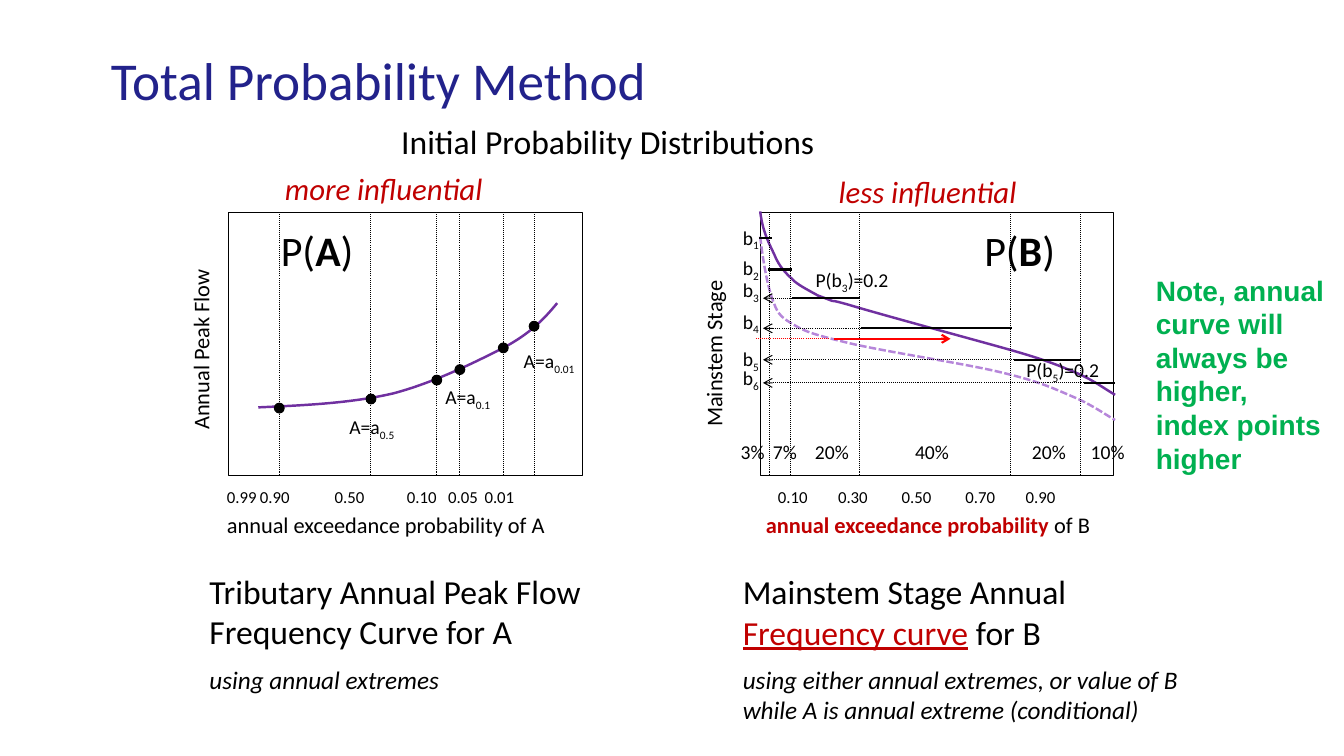
from lxml.etree import SubElement
from pptx import Presentation
from pptx.dml.color import RGBColor
from pptx.enum.dml import MSO_LINE
from pptx.enum.shapes import MSO_CONNECTOR, MSO_SHAPE
from pptx.enum.text import MSO_ANCHOR, MSO_AUTO_SIZE, PP_ALIGN
from pptx.oxml.ns import qn
from pptx.util import Pt

BLACK, RED, CRIMSON = "000000", "FF0000", "C00000"
PURPLE, LILAC, NAVY, GREEN = "7030A0", "B686DA", "22228B", "00B050"
SUBSCRIPT = {"baseline": -25000}


def color(hex_string):
    return RGBColor.from_string(hex_string)


class SlideBuilder:
    """Holds the text style and the slide being filled."""

    font_name = "Calibri"

    def __init__(self, slide):
        self.slide = slide

    def add_run(self, paragraph, text, size, hex_color=BLACK, bold=False, italic=False,
                underline=False, baseline=0, font_name=None):
        run = paragraph.add_run()
        run.text = text
        font = run.font
        font.name, font.size = font_name or self.font_name, Pt(size)
        font.bold, font.italic, font.underline = bold, italic, underline
        font.color.rgb = color(hex_color)
        if baseline:
            run._r.get_or_add_rPr().set("baseline", str(baseline))

    def title(self, text, left, top, width, height, size, hex_color):
        shape = self.slide.shapes.title
        shape.left, shape.top, shape.width, shape.height = map(Pt, (left, top, width, height))
        frame = shape.text_frame
        frame.vertical_anchor = MSO_ANCHOR.MIDDLE
        frame.paragraphs[0].alignment = PP_ALIGN.LEFT
        self.add_run(frame.paragraphs[0], text, size, hex_color)

    def text(self, left, top, width, height, *paragraphs, rotation=0, tabs=(), **style):
        """Each paragraph is a list of (text, style changes) runs."""
        shape = self.slide.shapes.add_textbox(*map(Pt, (left, top, width, height)))
        shape.rotation = rotation
        frame = shape.text_frame
        frame.word_wrap = True
        frame.auto_size = MSO_AUTO_SIZE.SHAPE_TO_FIT_TEXT
        for index, runs in enumerate(paragraphs):
            paragraph = frame.add_paragraph() if index else frame.paragraphs[0]
            if index:
                paragraph.space_before = Pt(9)
            for text, changes in runs:
                self.add_run(paragraph, text, **{**style, **changes})
        if tabs:
            tab_list = SubElement(frame.paragraphs[0]._p.get_or_add_pPr(), qn("a:tabLst"))
            for position in tabs:
                SubElement(tab_list, qn("a:tab"), pos=str(Pt(position)), algn="l")

    def label(self, left, top, width, height, text, size, **style):
        self.text(left, top, width, height, [(text, {})], size=size, **style)

    def set_line(self, shape, hex_color, width, dash=None):
        shape.line.color.rgb = color(hex_color)
        shape.line.width = Pt(width)
        if dash is not None:
            shape.line.dash_style = dash

    def shape(self, kind, left, top, width, height, fill=None):
        shape = self.slide.shapes.add_shape(kind, *map(Pt, (left, top, width, height)))
        shape.shadow.inherit = False
        if fill:
            shape.fill.solid()
            shape.fill.fore_color.rgb = color(fill)
        else:
            shape.fill.background()
        self.set_line(shape, BLACK, 0.75)

    def line(self, x1, y1, x2, y2, hex_color=BLACK, width=1.5, dash=None, arrow=False):
        connector = self.slide.shapes.add_connector(
            MSO_CONNECTOR.STRAIGHT, *map(Pt, (x1, y1, x2, y2)))
        self.set_line(connector, hex_color, width, dash)
        if arrow:
            SubElement(connector.line._get_or_add_ln(), qn("a:tailEnd"), type="arrow")
        SubElement(connector._element.spPr, qn("a:effectLst"))

    def dotted(self, x1, y1, x2, y2, **style):
        self.line(x1, y1, x2, y2, width=0.75, dash=MSO_LINE.ROUND_DOT, **style)

    def curve(self, points, hex_color, dash=None):
        """The first point starts the curve; each further three make a Bezier piece."""
        start, *others = [(Pt(x), Pt(y)) for x, y in points]
        builder = self.slide.shapes.build_freeform(*start)
        builder.add_line_segments(others, close=False)
        shape = builder.convert_to_shape()
        outline = next(shape._element.iter(qn("a:path")))
        segments = outline.findall(qn("a:lnTo"))
        for first in range(0, len(segments), 3):
            bezier = SubElement(outline, qn("a:cubicBezTo"))
            for segment in segments[first:first + 3]:
                bezier.append(segment[0])
                outline.remove(segment)
        shape.shadow.inherit = False
        shape.fill.background()
        self.set_line(shape, hex_color, 1.75, dash)


def build_chart_a(builder):
    # Frame, curve and quantile points
    builder.shape(MSO_SHAPE.RECTANGLE, 163.5, 152, 252.5, 188)
    builder.curve([(184.5, 291), (218, 289.5), (251, 288), (281, 281), (309.5, 273.5),
                   (339, 259), (359.5, 248.5), (378.5, 238.5), (389, 227.5), (398, 216.5)],
                  PURPLE)
    quantiles = [(199.5, 291.5), (265, 285), (312, 271.5), (328.5, 264), (359.5, 248.5),
                 (381.5, 233)]
    for x, y in quantiles:
        builder.dotted(x, 339, x, 151.5)
        builder.shape(MSO_SHAPE.OVAL, x - 3.5, y - 3.5, 7, 7, fill=BLACK)
    for probability, left, top in [("0.01", 367, 245.5), ("0.5", 242.5, 293),
                                   ("0.1", 311, 271.5)]:
        builder.text(left, top, 80, 24, [("A=a", {}), (probability, SUBSCRIPT)], size=14)

    # Axes and captions
    builder.label(155, 344, 279, 22, "0.99\t0.90\t0.50\t0.10\t0.05\t0.01", 12,
                  tabs=(23.5, 77, 128.5, 158, 184))
    builder.label(155, 361.5, 256, 27, "annual exceedance probability of A", 16)
    builder.label(59, 216, 169, 27, "Annual Peak Flow", 16, rotation=270)
    builder.label(196.5, 118, 194, 34, "more influential", 22, hex_color=CRIMSON, italic=True)
    builder.text(142.5, 404, 313, 98,
                 [("Tributary Annual Peak Flow Frequency Curve for A", {})],
                 [("using annual extremes", {"size": 18, "italic": True})], size=24)


def build_chart_b(builder):
    # Frame and the two curves
    builder.shape(MSO_SHAPE.RECTANGLE, 543, 152, 252.5, 188)
    builder.curve([(543, 151), (545, 168), (551, 176.5), (554.5, 185), (558.5, 193),
                   (563, 196.5), (567.5, 201), (572.5, 205), (578, 207.5), (584, 211),
                   (605.5, 219), (584, 211.5), (605.5, 217.5), (627, 224), (686, 240),
                   (713, 247.5), (740, 255), (751.5, 259), (765.5, 265), (780, 270.5),
                   (790, 278.5), (796.5, 282)], PURPLE)
    builder.curve([(543, 169), (545, 186.5), (548, 203), (551.5, 213), (555, 223),
                   (556.5, 225.5), (564.5, 230.5), (573, 235.5), (575.5, 237.5),
                   (600, 243.5), (624, 250), (685.5, 259), (713, 265.5), (741, 272),
                   (751.5, 277), (765.5, 283), (780, 289), (790, 296.5), (796.5, 300)],
                  LILAC, MSO_LINE.SQUARE_DOT)
    for x in (549.5, 564.5, 614, 722, 772):
        builder.dotted(x, 339, x, 151.5)

    # Index steps: left, right, height, label top, share of time, share left
    steps = [(542, 551.5, 170, 157.5, "3%", 522), (548.5, 566, 192.5, 179.5, "7%", 545),
             (566, 614, 213, 195, "20%", 575), (615, 723, 234.5, 217.5, "40%", 646.5),
             (724.5, 772, 257, 244, "20%", 730), (774, 796.5, 273.5, 258, "10%", 772)]
    for number, (left, right, y, label_top, share, share_left) in enumerate(steps, 1):
        builder.line(left, y, right, y)
        if number > 2:
            builder.dotted(left, y, 545, y, arrow=True)
        builder.text(523.5, label_top, 30, 24, [("b", {}), (str(number), SUBSCRIPT)], size=14)
        builder.label(share_left, 310.5, 48, 24, share, 14)
    for number, left, top in [("3", 575.5, 188), ("5", 726, 252)]:
        builder.text(left, top, 97, 24,
                     [("P(b", {}), (number, SUBSCRIPT), (")=0.2", {})], size=14)

    # Shift between the curves
    builder.line(596, 242, 679, 242, hex_color=RED, arrow=True)
    builder.dotted(540, 242, 592, 242, hex_color=RED)

    # Axes and captions
    builder.label(548.5, 344, 279, 22, "0.10\t0.30\t0.50\t0.70\t0.90", 12,
                  tabs=(43, 88.5, 134, 177))
    builder.text(540, 361.5, 265, 27,
                 [("annual exceedance probability ", {"hex_color": CRIMSON, "bold": True}),
                  ("of B", {})], size=16)
    builder.label(438.5, 227, 143, 27, "Mainstem Stage", 16, rotation=270)
    builder.label(592, 119.5, 194, 34, "less influential", 22, hex_color=CRIMSON, italic=True)
    builder.text(523.5, 404.5, 335.5, 120,
                 [("Mainstem Stage Annual ", {}),
                  ("Frequency curve", {"hex_color": CRIMSON, "underline": True}),
                  (" ", {}), ("for B", {})],
                 [("using either annual extremes, or value of B while A is annual extreme "
                   "(conditional)", {"size": 18, "italic": True})], size=24)


def main():
    presentation = Presentation()
    presentation.slide_width, presentation.slide_height = Pt(960), Pt(540)
    builder = SlideBuilder(presentation.slides.add_slide(presentation.slide_layouts[5]))

    # Headings
    builder.title("Total Probability Method", 72, 11.5, 816, 90, 38, NAVY)
    builder.label(279.5, 83, 399.5, 36, "Initial Probability Distributions", 24)

    # The two distributions
    build_chart_a(builder)
    build_chart_b(builder)
    for name, left in [("A", 193.5), ("B", 696)]:
        builder.text(left, 157, 112.5, 43,
                     [("P(", {}), (name, {"bold": True}), (")", {})], size=30)

    # Side note
    builder.label(818.5, 191.5, 137, 128,
                  "Note, annual curve will always be higher, index points higher", 20,
                  hex_color=GREEN, bold=True, font_name="Arial")
    presentation.save("out.pptx")


if __name__ == "__main__":
    main()
